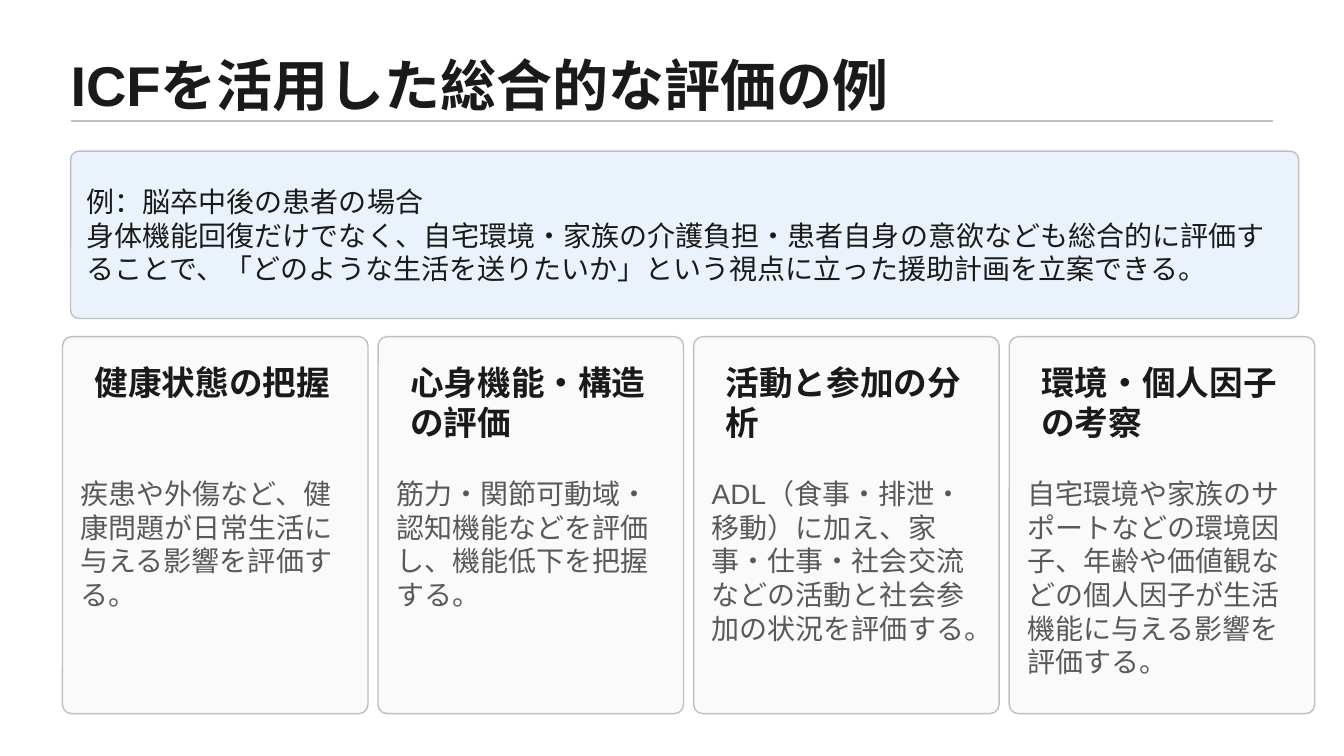
from lxml import etree
from pptx import Presentation
from pptx.dml.color import RGBColor
from pptx.enum.shapes import MSO_CONNECTOR, MSO_SHAPE
from pptx.enum.text import MSO_ANCHOR
from pptx.oxml.ns import qn
from pptx.util import Emu, Pt

EMU_PER_PX = 9144
FONT = "Arial"
INK = RGBColor(0x1A, 0x1A, 0x1A)
GRAY = RGBColor(0x59, 0x59, 0x59)
BORDER = RGBColor(0xBF, 0xBF, 0xBF)
PALE_BLUE = RGBColor(0xEA, 0xF3, 0xFB)
OFF_WHITE = RGBColor(0xFA, 0xFA, 0xFA)
STRAIGHT = MSO_CONNECTOR.STRAIGHT
ROUNDED = MSO_SHAPE.ROUNDED_RECTANGLE
TOP = MSO_ANCHOR.TOP
MIDDLE = MSO_ANCHOR.MIDDLE

TITLE = "ICFを活用した総合的な評価の例"
EXAMPLE = [
    "例：脳卒中後の患者の場合",
    "身体機能回復だけでなく、自宅環境・家族の介護負担・患者自身の意欲なども総合的に評価することで、"
    "「どのような生活を送りたいか」という視点に立った援助計画を立案できる。",
]
CARDS = [
    ("健康状態の把握", "疾患や外傷など、健康問題が日常生活に与える影響を評価する。"),
    ("心身機能・構造の評価", "筋力・関節可動域・認知機能などを評価し、機能低下を把握する。"),
    ("活動と参加の分析",
     "ADL（食事・排泄・移動）に加え、家事・仕事・社会交流などの活動と社会参加の状況を評価する。"),
    ("環境・個人因子の考察",
     "自宅環境や家族のサポートなどの環境因子、年齢や価値観などの個人因子が生活機能に与える影響を評価する。"),
]


def px(length):
    return Emu(length * EMU_PER_PX)


def add_text(slide, box, lines, size=20, color=INK, bold=False, anchor=TOP, inset=(10, 5)):
    frame = slide.shapes.add_textbox(*map(px, box)).text_frame
    frame.word_wrap = True
    frame.vertical_anchor = anchor
    frame.margin_left = frame.margin_right = px(inset[0])
    frame.margin_top = frame.margin_bottom = px(inset[1])
    for index, line in enumerate(lines):
        paragraph = frame.add_paragraph() if index else frame.paragraphs[0]
        run = paragraph.add_run()
        run.text = line
        run.font.name = FONT
        run.font.size = Pt(size)
        run.font.bold = bold
        run.font.color.rgb = color


def add_panel(slide, box, fill, rounding):
    shape = slide.shapes.add_shape(ROUNDED, *map(px, box))
    shape.adjustments[0] = rounding
    shape.shadow.inherit = False
    shape.fill.solid()
    shape.fill.fore_color.rgb = fill
    shape.line.color.rgb = BORDER
    shape.line.width = Pt(1)


def add_header(slide, box):
    left, top, width, height = box
    add_text(slide, box, [TITLE], size=40, bold=True, anchor=MIDDLE, inset=(0, 0))
    rule_y = px(top + height - 4)
    rule = slide.shapes.add_connector(STRAIGHT, px(left), rule_y, px(left + width), rule_y)
    rule.line.color.rgb = BORDER
    rule.line.width = Pt(1)
    etree.SubElement(rule._element.spPr, qn("a:effectLst"))


def add_example(slide, box):
    left, top, width, height = box
    add_panel(slide, box, PALE_BLUE, 0.05)
    add_text(slide, (left + 6, top, width - 11, height), EXAMPLE, anchor=MIDDLE)


def add_card(slide, box, heading, body):
    left, top, width, height = box
    add_panel(slide, box, OFF_WHITE, 0.03)
    add_text(slide, (left + 22, top + 20, width - 38, 97), [heading], size=24, bold=True)
    add_text(slide, (left + 8, top + 134, width - 14, height - 152), [body], color=GRAY)


def add_card_row(slide, box, gap):
    left, top, width, height = box
    card_width = (width - gap * (len(CARDS) - 1)) // len(CARDS)
    for index, (heading, body) in enumerate(CARDS):
        card_left = left + index * (card_width + gap)
        add_card(slide, (card_left, top, card_width, height), heading, body)


def main():
    presentation = Presentation()
    presentation.slide_width = px(1333)
    presentation.slide_height = px(750)
    slide = presentation.slides.add_slide(presentation.slide_layouts[6])
    add_header(slide, (70, 42, 1193, 82))
    add_example(slide, (70, 150, 1218, 166))
    add_card_row(slide, (62, 334, 1242, 374), gap=10)
    presentation.save("out.pptx")


if __name__ == "__main__":
    main()
